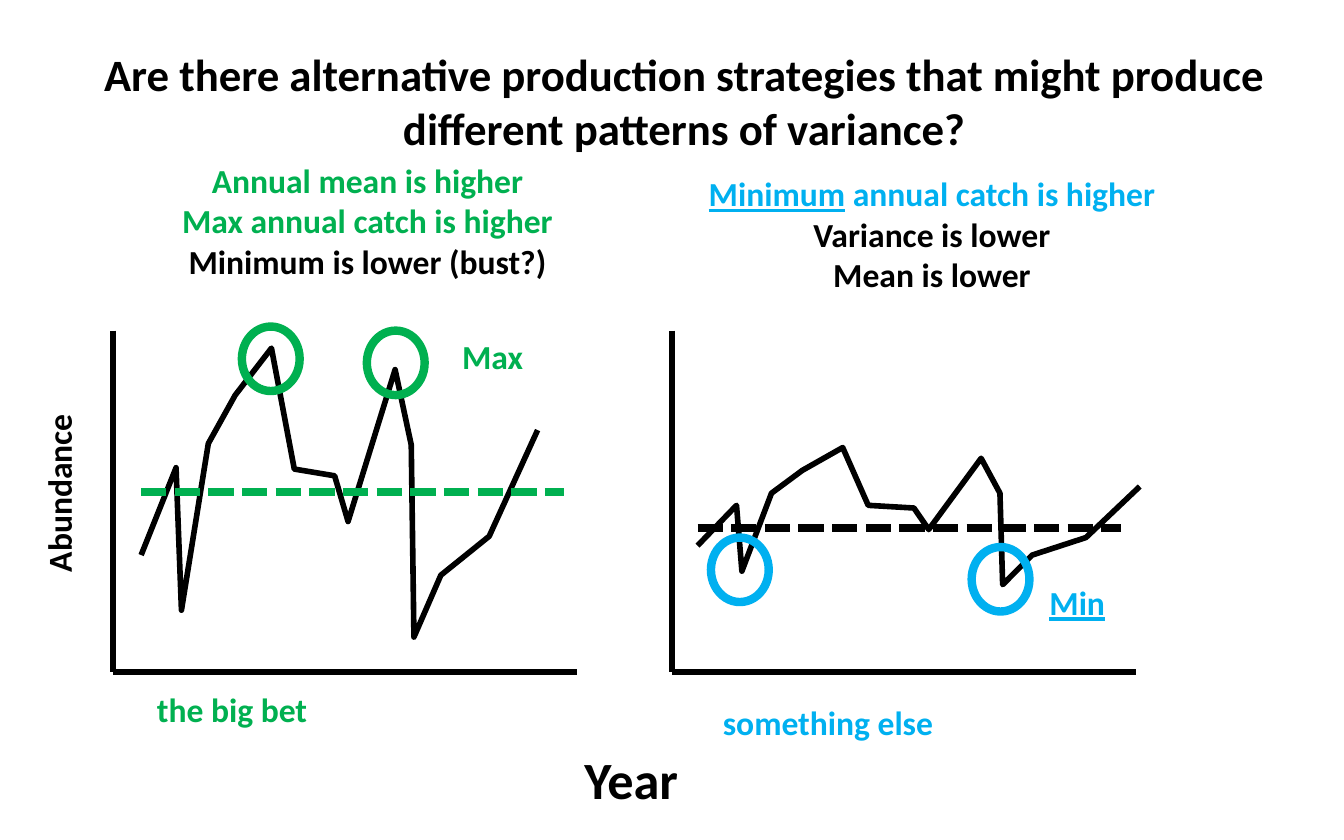
from dataclasses import dataclass

from lxml import etree
from pptx import Presentation
from pptx import util as u
from pptx.dml.color import RGBColor
from pptx.enum import dml, shapes, text
from pptx.oxml.ns import qn

WIDTH, HEIGHT = 10, 6.25
COLUMNS, ROWS = 100, 62.5


@dataclass(frozen=True)
class Theme:
    font: str = "Calibri"
    ink: str = "000000"
    green: str = "00B050"
    blue: str = "00B0F0"
    body: int = 18
    title: int = 24
    axis_title: int = 28
    thin: float = 3
    thick: float = 4.5


THEME = Theme()


def col(count):
    return u.Inches(count * WIDTH / COLUMNS)


def row(count):
    return u.Inches(count * HEIGHT / ROWS)


def set_line(line, color, width):
    line.color.rgb = RGBColor.from_string(color)
    line.width = u.Pt(width)


def add_line(page, start, end, color=THEME.ink, width=THEME.thin, dashed=False):
    line = page.shapes.add_connector(
        shapes.MSO_CONNECTOR.STRAIGHT,
        col(start[0]), row(start[1]), col(end[0]), row(end[1]),
    )
    set_line(line.line, color, width)
    if dashed:
        line.line.dash_style = dml.MSO_LINE.SQUARE_DOT
    etree.SubElement(line._element.spPr, qn("a:effectLst"))


def add_axes(page, left, top=24.6, width=34.5, height=25.4):
    corner = (left, top + height)
    add_line(page, (left, top), corner)
    add_line(page, corner, (left + width, top + height))


def add_curve(page, points):
    places = [(col(x), row(y)) for x, y in points]
    builder = page.shapes.build_freeform(*places[0])
    builder.add_line_segments(places[1:], close=False)
    curve = builder.convert_to_shape()
    curve.shadow.inherit = False
    curve.fill.background()
    set_line(curve.line, THEME.ink, THEME.thin)


def add_mean(page, left, level, color):
    add_line(page, (left, level), (left + 31.5, level), color, THEME.thick, True)


def add_ring(page, left, top, color):
    ring = page.shapes.add_shape(
        shapes.MSO_SHAPE.OVAL, col(left), row(top), col(4.3), row(4.8)
    )
    ring.shadow.inherit = False
    ring.fill.background()
    set_line(ring.line, color, THEME.thick)


def add_span(para, words, color, size, underline=False):
    span = para.add_run()
    span.text = words
    span.font.name = THEME.font
    span.font.size = u.Pt(size)
    span.font.bold = True
    span.font.color.rgb = RGBColor.from_string(color)
    if underline:
        span.font.underline = True


def add_text(page, place, paragraphs, size=THEME.body, centered=False, turn=0):
    left, top, width, height = place
    box = page.shapes.add_textbox(col(left), row(top), col(width), row(height))
    box.rotation = turn
    frame = box.text_frame
    frame.word_wrap = False
    frame.auto_size = text.MSO_AUTO_SIZE.SHAPE_TO_FIT_TEXT
    for index, spans in enumerate(paragraphs):
        para = frame.add_paragraph() if index else frame.paragraphs[0]
        para.alignment = text.PP_ALIGN.CENTER if centered else text.PP_ALIGN.LEFT
        for words, color, *underline in spans:
            add_span(para, words, color, size, *underline)


def main():
    deck = Presentation()
    deck.slide_width, deck.slide_height = u.Inches(WIDTH), u.Inches(HEIGHT)
    page = deck.slides.add_slide(deck.slide_layouts[6])
    ink, green, blue = THEME.ink, THEME.green, THEME.blue

    for left in (8.4, 50):
        add_axes(page, left)

    big_bet = [
        (10.5, 41.3), (13.1, 34.8), (13.5, 45.4), (15.5, 33), (17.5, 29.4),
        (20.2, 25.9), (21.9, 34.9), (24.9, 35.4), (25.9, 38.8), (29.4, 27.5),
        (30.6, 33.1), (30.8, 47.4), (32.8, 42.8), (36.4, 39.9), (40, 32),
    ]
    something_else = [
        (51.9, 40.6), (54.8, 37.6), (55.2, 42.5), (57.4, 36.7), (59.7, 35),
        (62.7, 33.3), (64.6, 37.6), (68, 37.8), (69.1, 39.4), (73, 34.1),
        (74.4, 36.7), (74.6, 43.5), (76.8, 41.3), (80.8, 40), (84.8, 36.2),
    ]
    for points in (big_bet, something_else):
        add_curve(page, points)

    add_mean(page, 10.5, 36.6, green)
    add_mean(page, 51.9, 39.3, ink)

    add_text(page, (12.4, 11.4, 29.9, 10.1), [
        [("Annual mean is higher", green)],
        [("Max annual catch is higher", green)],
        [("Minimum is lower (bust?)", ink)],
    ], centered=True)
    add_text(page, (51.6, 12.4, 35.5, 10.1), [
        [("Minimum", blue, True), (" annual catch is higher", blue)],
        [("Variance is lower", ink)],
        [("Mean is lower", ink)],
    ], centered=True)

    for left, top, color in (
        (27.3, 24.6, green), (18, 24.3, green), (52.9, 40, blue), (72.3, 40.7, blue)
    ):
        add_ring(page, left, top, color)

    add_text(page, (42.5, 55.1, 9.1, 5.7), [[("Year", ink)]], THEME.axis_title)
    add_text(page, (-2.6, 34.6, 13.9, 4), [[("Abundance", ink)]], turn=270)
    add_text(page, (6.3, 3, 89.2, 9.1), [
        [("Are there alternative production strategies that might produce", ink)],
        [("different patterns of variance?", ink)],
    ], THEME.title, centered=True)

    for left, top, width, *span in (
        (10.7, 50.8, 13.3, "the big bet", green),
        (52.8, 51.7, 17.8, "something else", blue),
        (33.4, 24.5, 6.6, "Max", green),
        (77.1, 42.8, 6.2, "Min", blue, True),
    ):
        add_text(page, (left, top, width, 4), [[span]])

    deck.save("out.pptx")


if __name__ == "__main__":
    main()
